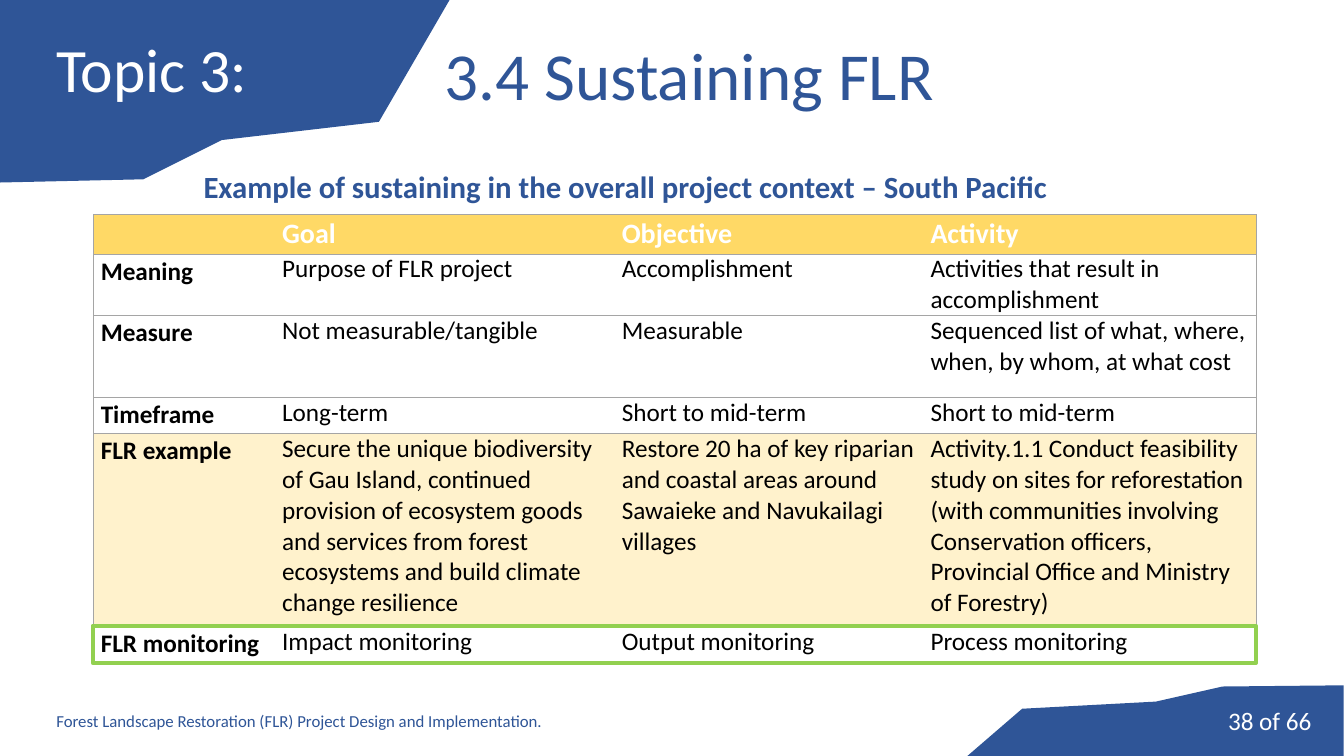
from dataclasses import dataclass

from lxml.etree import SubElement
from pptx import Presentation
from pptx.dml.color import RGBColor
from pptx.enum.shapes import MSO_SHAPE
from pptx.enum.text import MSO_ANCHOR, PP_ALIGN
from pptx.oxml.ns import qn
from pptx.slide import Slide
from pptx.table import _Cell
from pptx.text.text import _Paragraph
from pptx.util import Cm, Pt

FONT = "Calibri"
COLORS = {
    "blue": "2F5597",
    "white": "FFFFFF",
    "black": "000000",
    "gold": "FFD966",
    "cream": "FFF2CC",
    "gray": "A5A5A5",
    "green": "92D050",
}


@dataclass
class Label:
    text: str
    box: tuple[float, float, float, float]
    size: int
    color: str
    bold: bool = False
    anchor: MSO_ANCHOR = MSO_ANCHOR.MIDDLE
    align: PP_ALIGN = PP_ALIGN.LEFT
    spacing: float = 1.0


@dataclass
class Row:
    height: float
    texts: tuple[str, str, str, str]
    fill: str | None = None


BANNERS = [
    [(0, 0), (11.33, 0), (9.55, 3.07), (5.59, 3.53), (3.61, 4.52), (0, 4.6)],
    [(33.86, 19.05), (24.38, 19.05), (25.76, 17.86), (29.13, 17.68), (30.81, 17.3), (33.86, 17.27)],
]

LABELS = [
    Label("3.4 Sustaining FLR", (10.95, 0.71, 22.07, 2.31), 48, "blue", anchor=MSO_ANCHOR.TOP),
    Label("Topic 3:", (1.17, 0, 11.79, 3.68), 44, "white", spacing=0.9),
    Label("Forest Landscape Restoration (FLR) Project Design and Implementation.",
          (1.17, 17.65, 20.32, 1.02), 12, "blue"),
    Label("Example of sustaining in the overall project context – South Pacific",
          (4.88, 4.09, 21.97, 1.19), 22, "blue", bold=True, anchor=MSO_ANCHOR.TOP),
    Label("38 of 66", (29.79, 17.65, 3.51, 1.02), 18, "white", align=PP_ALIGN.RIGHT),
]

COLUMN_WIDTHS = [4.57, 8.56, 7.78, 8.38]
ROWS = [
    Row(0.99, ("", "Goal", "Objective", "Activity"), "gold"),
    Row(1.55, ("Meaning", "Purpose of FLR project", "Accomplishment",
               "Activities that result in accomplishment")),
    Row(2.06, ("Measure", "Not measurable/tangible", "Measurable",
               "Sequenced list of what, where, when, by whom, at what cost")),
    Row(0.92, ("Timeframe", "Long-term", "Short to mid-term", "Short to mid-term")),
    Row(4.85, ("FLR example",
               "Secure the unique biodiversity of Gau Island, continued provision of ecosystem goods "
               "and services from forest ecosystems and build climate change resilience",
               "Restore 20 ha of key riparian and coastal areas around Sawaieke and Navukailagi villages",
               "Activity.1.1 Conduct feasibility study on sites for reforestation (with communities "
               "involving Conservation officers, Provincial Office and Ministry of Forestry)"), "cream"),
    Row(0.92, ("FLR monitoring", "Impact monitoring", "Output monitoring", "Process monitoring")),
]


def color(name: str) -> RGBColor:
    return RGBColor.from_string(COLORS[name])


def format_text(paragraph: _Paragraph, size: int, color_name: str, bold: bool, spacing: float) -> None:
    paragraph.line_spacing = spacing
    for font in [paragraph.font] + [run.font for run in paragraph.runs]:
        font.name = FONT
        font.size = Pt(size)
        font.bold = bold
        font.color.rgb = color(color_name)


def draw_banner(slide: Slide, points: list[tuple[float, float]]) -> None:
    corners = [(Cm(x), Cm(y)) for x, y in points]
    builder = slide.shapes.build_freeform(*corners[0])
    builder.add_line_segments(corners[1:], close=True)
    shape = builder.convert_to_shape()
    shape.shadow.inherit = False
    shape.fill.solid()
    shape.fill.fore_color.rgb = color("blue")
    shape.line.fill.background()


def draw_label(slide: Slide, label: Label) -> None:
    text_frame = slide.shapes.add_textbox(*map(Cm, label.box)).text_frame
    text_frame.word_wrap = True
    text_frame.vertical_anchor = label.anchor
    text_frame.text = label.text
    paragraph = text_frame.paragraphs[0]
    paragraph.alignment = label.align
    format_text(paragraph, label.size, label.color, label.bold, label.spacing)


def set_borders(cell: _Cell, visible_sides: str) -> None:
    properties = cell._tc.get_or_add_tcPr()
    for side in "LRTB":
        line = SubElement(properties, qn(f"a:ln{side}"), w=str(Pt(0.5)))
        if side in visible_sides:
            fill = SubElement(line, qn("a:solidFill"))
            SubElement(fill, qn("a:srgbClr"), val=COLORS["gray"])
        else:
            SubElement(line, qn("a:noFill"))


def draw_table(slide: Slide) -> None:
    height = sum(row.height for row in ROWS)
    table = slide.shapes.add_table(len(ROWS), len(COLUMN_WIDTHS), Cm(2.36), Cm(5.41),
                                   Cm(sum(COLUMN_WIDTHS)), Cm(height)).table
    table.first_row = False
    table.horz_banding = False
    for column, width in zip(table.columns, COLUMN_WIDTHS):
        column.width = Cm(width)
    for row_index, row in enumerate(ROWS):
        table.rows[row_index].height = Cm(row.height)
        is_header = row_index == 0
        for column_index, text in enumerate(row.texts):
            cell = table.cell(row_index, column_index)
            cell.margin_left = cell.margin_right = Cm(0.18)
            cell.margin_top = cell.margin_bottom = 0
            set_borders(cell, "TB" + {0: "L", len(COLUMN_WIDTHS) - 1: "R"}.get(column_index, ""))
            if row.fill:
                cell.fill.solid()
                cell.fill.fore_color.rgb = color(row.fill)
            else:
                cell.fill.background()
            cell.text_frame.text = text
            is_heading = is_header or column_index == 0
            format_text(cell.text_frame.paragraphs[0], 20 if is_header else 18,
                        "white" if is_header else "black", is_heading, 1.07 if is_heading else 1.0)


def draw_highlight(slide: Slide) -> None:
    shape = slide.shapes.add_shape(MSO_SHAPE.RECTANGLE, Cm(2.34), Cm(15.77), Cm(29.31), Cm(0.94))
    shape.shadow.inherit = False
    shape.fill.background()
    shape.line.color.rgb = color("green")
    shape.line.width = Pt(3)


def main() -> None:
    presentation = Presentation()
    presentation.slide_width = Cm(33.87)
    presentation.slide_height = Cm(19.05)
    slide = presentation.slides.add_slide(presentation.slide_layouts[6])
    for points in BANNERS:
        draw_banner(slide, points)
    for label in LABELS:
        draw_label(slide, label)
    draw_table(slide)
    draw_highlight(slide)
    presentation.save("out.pptx")


if __name__ == "__main__":
    main()
